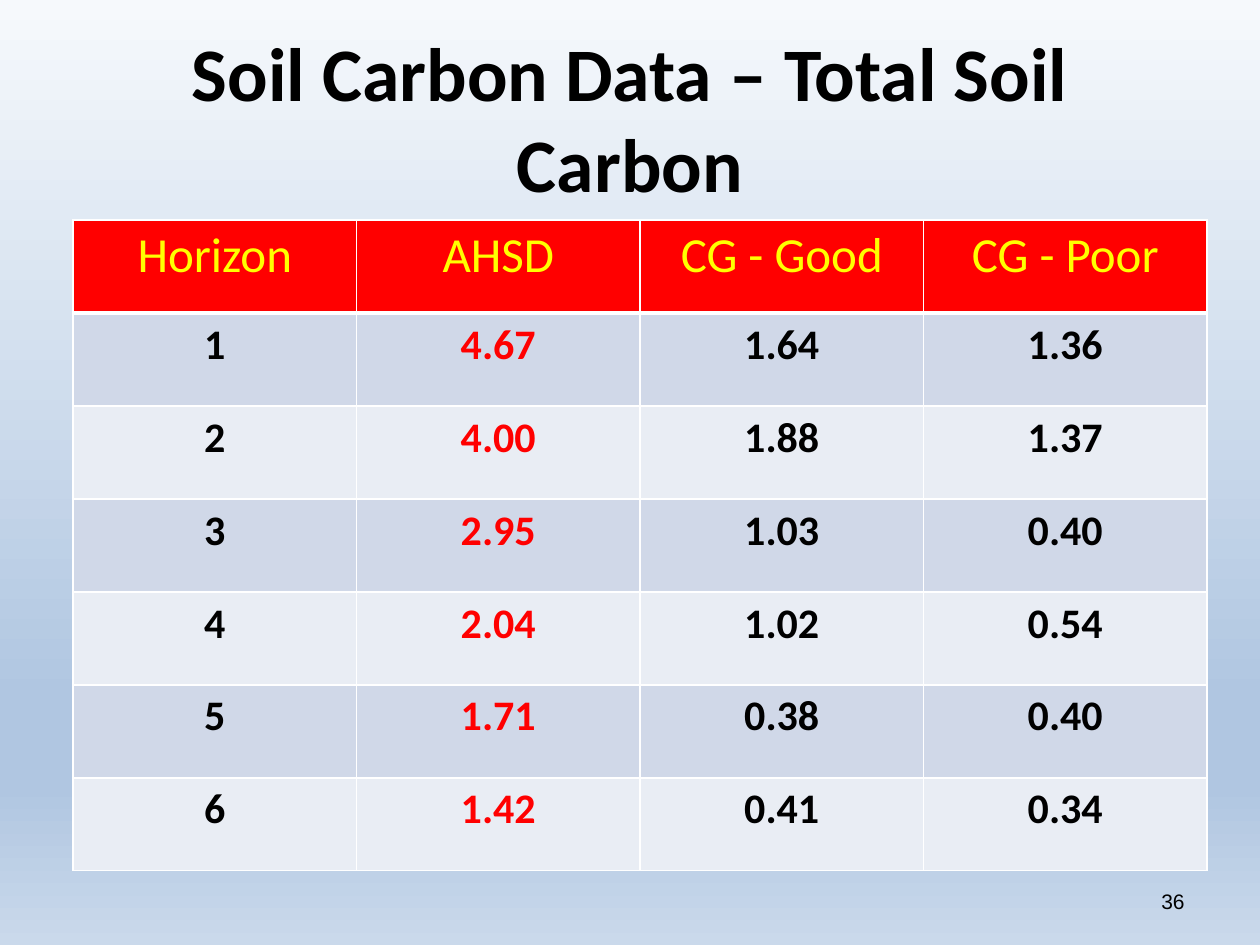
import copy

import pptx
import pptx.dml.color
import pptx.enum.text
import pptx.oxml
import pptx.oxml.ns
import pptx.util

RGBColor = pptx.dml.color.RGBColor
PP_ALIGN = pptx.enum.text.PP_ALIGN
MSO_ANCHOR = pptx.enum.text.MSO_ANCHOR

EMU_PER_PX = 914400 / 126

BLACK = RGBColor(0x00, 0x00, 0x00)
WHITE = RGBColor(0xFF, 0xFF, 0xFF)
RED = RGBColor(0xFF, 0x00, 0x00)
YELLOW = RGBColor(0xFF, 0xFF, 0x00)
BAND_DARK = RGBColor(0xD0, 0xD8, 0xE8)
BAND_LIGHT = RGBColor(0xE9, 0xED, 0xF4)
SKY_STOPS = [
    (0, RGBColor(0xF6, 0xF9, 0xFC)),
    (0.74, RGBColor(0xB0, 0xC6, 0xE1)),
    (0.83, RGBColor(0xB0, 0xC6, 0xE1)),
    (1, RGBColor(0xCA, 0xD9, 0xEB)),
]

HEADINGS = ["Horizon", "AHSD", "CG - Good", "CG - Poor"]
CARBON = [
    ["1", "4.67", "1.64", "1.36"],
    ["2", "4.00", "1.88", "1.37"],
    ["3", "2.95", "1.03", "0.40"],
    ["4", "2.04", "1.02", "0.54"],
    ["5", "1.71", "0.38", "0.40"],
    ["6", "1.42", "0.41", "0.34"],
]


def px(length):
    return pptx.util.Emu(round(length * EMU_PER_PX))


def write(frame, text, size, color, bold=False, font="Calibri", align=PP_ALIGN.CENTER):
    frame.text = text
    paragraph = frame.paragraphs[0]
    paragraph.alignment = align
    for run in paragraph.runs:
        run.font.name = font
        run.font.size = pptx.util.Pt(size)
        run.font.bold = bold
        run.font.color.rgb = color


def paint_background(slide):
    fill = slide.background.fill
    fill.gradient()
    fill.gradient_angle = 270
    # The default gradient has two stops; add the missing ones
    first = fill.gradient_stops[0]
    stop_list = slide.background._cSld.find(".//" + pptx.oxml.ns.qn("a:gsLst"))
    while len(stop_list) < len(SKY_STOPS):
        stop_list.append(copy.deepcopy(stop_list[0]))
    for stop, (position, color) in zip(fill.gradient_stops, SKY_STOPS):
        stop.position = position
        stop.color.rgb = color


def place_title(slide, left, top, width, height):
    title = slide.shapes.title
    title.left, title.top = px(left), px(top)
    title.width, title.height = px(width), px(height)
    frame = title.text_frame
    frame.auto_size = pptx.enum.text.MSO_AUTO_SIZE.NONE
    frame.vertical_anchor = MSO_ANCHOR.MIDDLE
    write(frame, "Soil Carbon Data – Total Soil Carbon", 43.2, BLACK, bold=True)


def add_borders(cell, bottom_width):
    widths = {"lnL": 1, "lnR": 1, "lnT": 1, "lnB": bottom_width}
    properties = cell._tc.get_or_add_tcPr()
    for side, width in widths.items():
        properties.append(pptx.oxml.parse_xml(
            f'<a:{side} {pptx.oxml.ns.nsdecls("a")} w="{pptx.util.Pt(width)}">'
            f'<a:solidFill><a:srgbClr val="{WHITE}"/></a:solidFill></a:{side}>'))


def place_carbon_table(slide, left, top, width, height):
    rows = [HEADINGS] + CARBON
    table = slide.shapes.add_table(
        len(rows), len(HEADINGS), px(left), px(top), px(width), px(height)).table
    for column in table.columns:
        column.width = px(width / len(HEADINGS))
    for row in table.rows:
        row.height = px(height / len(rows))

    for r, values in enumerate(rows):
        for c, value in enumerate(values):
            cell = table.cell(r, c)
            is_heading = r == 0
            add_borders(cell, 3 if is_heading else 1)
            cell.fill.solid()
            if is_heading:
                cell.fill.fore_color.rgb = RED
                write(cell.text_frame, value, 28, YELLOW)
            else:
                cell.fill.fore_color.rgb = BAND_DARK if r % 2 else BAND_LIGHT
                color = RED if HEADINGS[c] == "AHSD" else BLACK
                write(cell.text_frame, value, 24, color, bold=True)


def place_page_number(slide, left, top, width, height):
    number = slide.shapes.add_textbox(px(left), px(top), px(width), px(height))
    frame = number.text_frame
    frame.word_wrap = True
    frame.vertical_anchor = MSO_ANCHOR.MIDDLE
    write(frame, "36", 12, BLACK, font="Arial", align=PP_ALIGN.RIGHT)


def main():
    deck = pptx.Presentation()
    deck.slide_width, deck.slide_height = px(1260), px(945)
    slide = deck.slides.add_slide(deck.slide_layouts.get_by_name("Title Only"))
    paint_background(slide)
    place_title(slide, 63, 38, 1134, 157)
    place_carbon_table(slide, 73, 220, 1134, 651)
    place_page_number(slide, 903, 876, 294, 50)
    deck.save("out.pptx")


if __name__ == "__main__":
    main()
